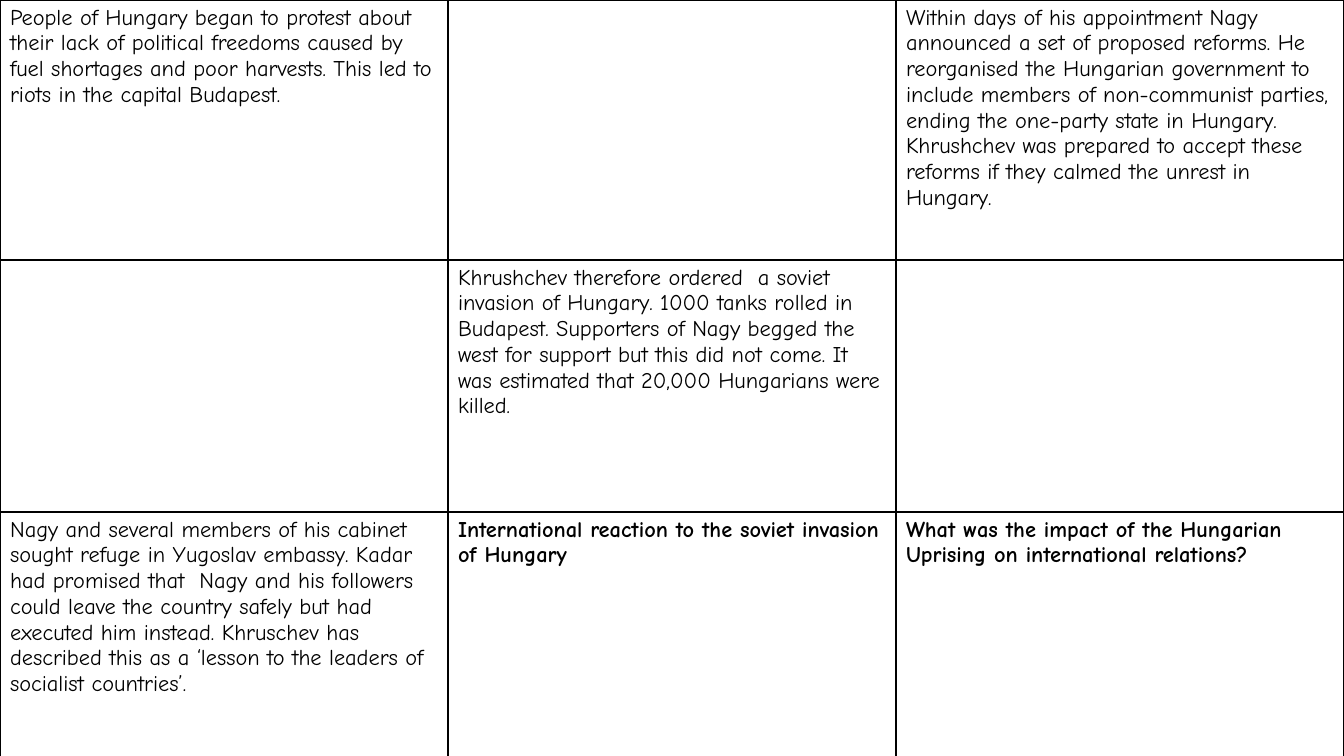
"""Build a three-by-three grid of notes on the Hungarian Uprising."""
import lxml.etree
import pptx
import pptx.dml.color
import pptx.oxml.ns
import pptx.util

ROWS = [
    [
        "People of Hungary began to protest about their lack of political freedoms caused by "
        "fuel shortages and poor harvests. This led to riots in the capital Budapest.",
        "",
        "Within days of his appointment Nagy announced a set of proposed reforms. He reorganised "
        "the Hungarian government to include members of non-communist parties, ending the "
        "one-party state in Hungary. Khrushchev was prepared to accept these reforms if they "
        "calmed the unrest in Hungary.",
    ],
    [
        "",
        "Khrushchev therefore ordered  a soviet invasion of Hungary. 1000 tanks rolled in "
        "Budapest. Supporters of Nagy begged the west for support but this did not come. It was "
        "estimated that 20,000 Hungarians were killed.",
        "",
    ],
    [
        "Nagy and several members of his cabinet sought refuge in Yugoslav embassy. Kadar had "
        "promised that  Nagy and his followers could leave the country safely but had executed "
        "him instead. Khruschev has described this as a ‘lesson to the leaders of socialist "
        "countries’.",
        "International reaction to the soviet invasion of Hungary",
        "What was the impact of the Hungarian Uprising on international relations?",
    ],
]
HEADINGS = ROWS[2][1:]
SLIDE_W, SLIDE_H = 1344, 756
ROW_HEIGHTS = [260, 252, 252]
COL_W = SLIDE_W // len(ROWS[0])
INK = "000000"
FONT = {"name": "Comic Neue", "size": pptx.util.Pt(16)}


def px(n):
    return pptx.util.Emu(round(n * 914400 / 100.8))


def color(value):
    return pptx.dml.color.RGBColor.from_string(value)


def add_borders(cell):
    tc_pr = cell._tc.get_or_add_tcPr()
    qn = pptx.oxml.ns.qn
    for i, side in enumerate(("a:lnL", "a:lnR", "a:lnT", "a:lnB")):
        ln = lxml.etree.Element(qn(side), w=str(pptx.util.Pt(1)))
        fill = lxml.etree.SubElement(ln, qn("a:solidFill"))
        lxml.etree.SubElement(fill, qn("a:srgbClr"), val=INK)
        tc_pr.insert(i, ln)


def fill_cell(cell, text):
    cell.fill.background()
    add_borders(cell)
    if not text:
        return
    r = cell.text_frame.paragraphs[0].add_run()
    r.text = text
    for name, value in {**FONT, "bold": text in HEADINGS}.items():
        setattr(r.font, name, value)
    r.font.color.rgb = color(INK)


def main():
    prs = pptx.Presentation()
    prs.slide_width, prs.slide_height = px(SLIDE_W), px(SLIDE_H)
    s = prs.slides.add_slide(prs.slide_layouts[6])
    table = s.shapes.add_table(len(ROWS), len(ROWS[0]), 0, 0,
                               px(SLIDE_W), px(sum(ROW_HEIGHTS))).table
    table.first_row = table.horz_banding = False
    for col in table.columns:
        col.width = px(COL_W)
    for i, (texts, height) in enumerate(zip(ROWS, ROW_HEIGHTS)):
        table.rows[i].height = px(height)
        for j, text in enumerate(texts):
            fill_cell(table.cell(i, j), text)
    prs.save("out.pptx")


if __name__ == "__main__":
    main()
